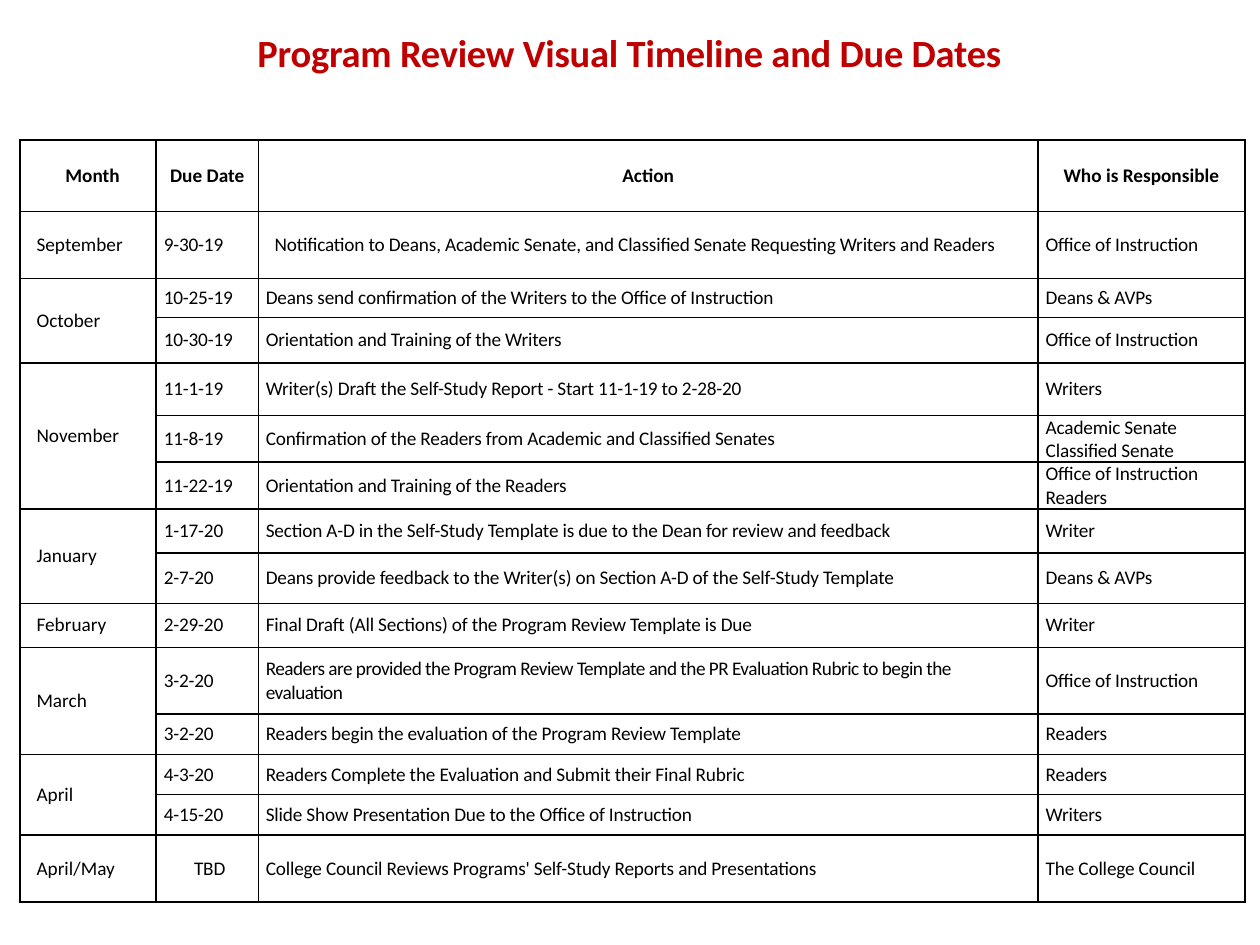
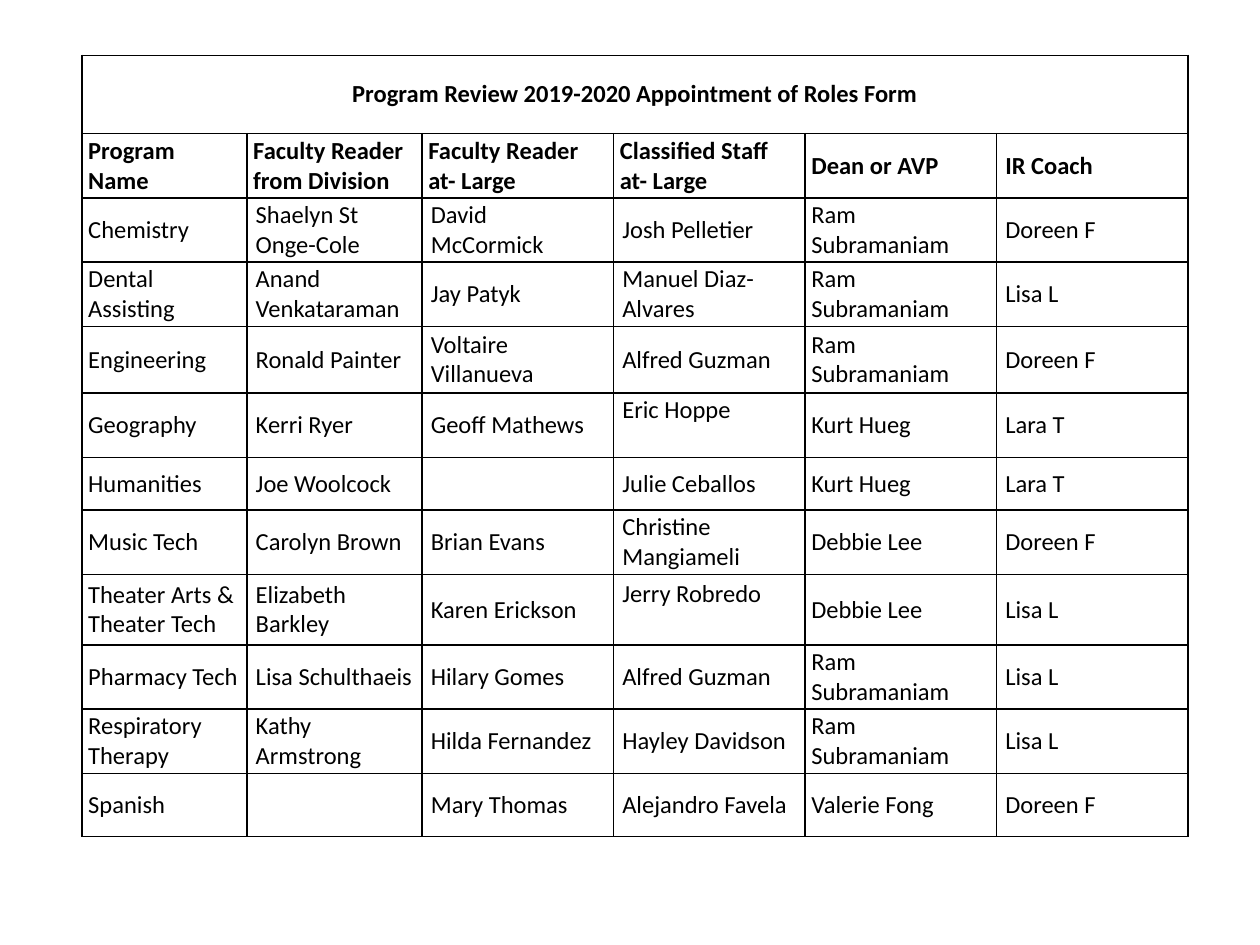
import pptx
import pptx.dml.color
import pptx.enum.text
import pptx.oxml
import pptx.oxml.ns
import pptx.util

PX = 9144  # EMU per px, 100 px to the inch
RED = pptx.dml.color.RGBColor(0xC0, 0x00, 0x00)
BLACK = pptx.dml.color.RGBColor(0x00, 0x00, 0x00)
WHITE = pptx.dml.color.RGBColor(0xFF, 0xFF, 0xFF)
CENTER = pptx.enum.text.PP_ALIGN.CENTER
MIDDLE = pptx.enum.text.MSO_ANCHOR.MIDDLE


class Deck:
    """Holds the shared style and the current slide."""
    font = "Calibri"
    line = pptx.util.Pt(1)

    def __init__(self):
        self.prs = pptx.Presentation()
        self.prs.slide_width, self.prs.slide_height = 1000 * PX, 750 * PX
        self.s = None

    def slide(self):
        self.s = self.prs.slides.add_slide(self.prs.slide_layouts[6])

    def format(self, tf, size, color=BLACK, bold=False, align=None, indent=0, spacing=0):
        for p in tf.paragraphs:
            p.alignment = align
            if indent:
                p._p.get_or_add_pPr().set("marL", str(indent * PX))
            for r in p.runs:
                r.font.name, r.font.size = self.font, pptx.util.Pt(size)
                r.font.bold, r.font.color.rgb = bold, color
                if spacing:  # hundredths of a point
                    r._r.get_or_add_rPr().set("spc", str(spacing))

    def title(self, text, x, y, w, h):
        tf = self.s.shapes.add_textbox(x * PX, y * PX, w * PX, h * PX).text_frame
        tf.word_wrap = True
        tf.text = text
        self.format(tf, 22, RED, True, CENTER, indent=7, spacing=-10)

    def border(self, cell):
        tcPr = cell._tc.get_or_add_tcPr()
        for i, side in enumerate(("lnL", "lnR", "lnT", "lnB")):
            tcPr.insert(i, pptx.oxml.parse_xml(
                f'<a:{side} {pptx.oxml.ns.nsdecls("a")} w="{self.line}">'
                f'<a:solidFill><a:srgbClr val="{BLACK}"/></a:solidFill></a:{side}>'))

    def table(self, x, y, cols, heights, rows, size, style):
        """None in rows continues the cell above or to the left.

        style(row, column) gives the side inset and the text format of a cell.
        """
        t = self.s.shapes.add_table(len(rows), len(cols), x * PX, y * PX,
                                    sum(cols) * PX, sum(heights) * PX).table
        t.first_row = t.horz_banding = False
        for col, w in zip(t.columns, cols):
            col.width = w * PX
        for row, h in zip(t.rows, heights):
            row.height = h * PX
        for i, row in enumerate(rows):
            for j, text in enumerate(row):
                cell = t.cell(i, j)
                cell.fill.solid()
                cell.fill.fore_color.rgb = WHITE
                self.border(cell)
                if text is None:
                    continue
                inset, look = style(i, j)
                cell.margin_left = cell.margin_right = inset * PX
                cell.margin_top = cell.margin_bottom = 0
                cell.vertical_anchor = MIDDLE
                cell.text_frame.text = text
                self.format(cell.text_frame, size, **look)
                # Merge over the continued cells
                down, right = i, j
                while right + 1 < len(row) and row[right + 1] is None:
                    right += 1
                while down + 1 < len(rows) and rows[down + 1][j] is None:
                    down += 1
                if (down, right) != (i, j):
                    cell.merge(t.cell(down, right))
        return t


# Timeline: month, due date, action, who is responsible
TIMELINE = [
    ("Month", "Due Date", "Action", "Who is Responsible"),
    ("September", "9-30-19", "Notification to Deans, Academic Senate, and Classified Senate "
     "Requesting Writers and Readers", "Office of Instruction"),
    ("October", "10-25-19", "Deans send confirmation of the Writers to the Office of Instruction",
     "Deans & AVPs"),
    (None, "10-30-19", "Orientation and Training of the Writers", "Office of Instruction"),
    ("November", "11-1-19", "Writer(s) Draft the Self-Study Report - Start 11-1-19 to 2-28-20",
     "Writers"),
    (None, "11-8-19", "Confirmation of the Readers from Academic and Classified Senates",
     "Academic Senate\nClassified Senate"),
    (None, "11-22-19", "Orientation and Training of the Readers",
     "Office of Instruction\nReaders"),
    ("January", "1-17-20", "Section A-D in the Self-Study Template is due to the Dean for "
     "review and feedback", "Writer"),
    (None, "2-7-20", "Deans provide feedback to the Writer(s) on Section A-D of the "
     "Self-Study Template", "Deans & AVPs"),
    ("February", "2-29-20", "Final Draft (All Sections) of the Program Review Template is Due",
     "Writer"),
    ("March", "3-2-20", "Readers are provided the Program Review Template and the PR "
     "Evaluation Rubric to begin the evaluation", "Office of Instruction"),
    (None, "3-2-20", "Readers begin the evaluation of the Program Review Template", "Readers"),
    ("April", "4-3-20", "Readers Complete the Evaluation and Submit their Final Rubric",
     "Readers"),
    (None, "4-15-20", "Slide Show Presentation Due to the Office of Instruction", "Writers"),
    ("April/May", "TBD", "College Council Reviews Programs' Self-Study Reports and Presentations",
     "The College Council"),
]
NOTIFICATION, RUBRIC, COUNCIL = 1, 10, 14  # rows with a look of their own

# Roles: program, readers, staff, dean, coach
ROLES = [
    ("Program Review 2019-2020 Appointment of Roles Form",) + (None,) * 5,
    ("Program Name", "Faculty Reader from Division", "Faculty Reader at- Large",
     "Classified Staff at- Large", "Dean or AVP", "IR Coach"),
    ("Chemistry", "Shaelyn St Onge-Cole", "David McCormick", "Josh Pelletier",
     "Ram Subramaniam", "Doreen F"),
    ("Dental Assisting", "Anand Venkataraman", "Jay Patyk", "Manuel Diaz-Alvares",
     "Ram Subramaniam", "Lisa L"),
    ("Engineering", "Ronald Painter", "Voltaire Villanueva", "Alfred Guzman",
     "Ram Subramaniam", "Doreen F"),
    ("Geography", "Kerri Ryer", "Geoff Mathews", "Eric Hoppe", "Kurt Hueg", "Lara T"),
    ("Humanities", "Joe Woolcock", "", "Julie Ceballos", "Kurt Hueg", "Lara T"),
    ("Music Tech", "Carolyn Brown", "Brian Evans", "Christine Mangiameli",
     "Debbie Lee", "Doreen F"),
    ("Theater Arts & Theater Tech", "Elizabeth Barkley", "Karen Erickson", "Jerry Robredo",
     "Debbie Lee", "Lisa L"),
    ("Pharmacy Tech", "Lisa Schulthaeis", "Hilary Gomes", "Alfred Guzman",
     "Ram Subramaniam", "Lisa L"),
    ("Respiratory Therapy", "Kathy Armstrong", "Hilda Fernandez", "Hayley Davidson",
     "Ram Subramaniam", "Lisa L"),
    ("Spanish", "", "Mary Thomas", "Alejandro Favela", "Valerie Fong", "Doreen F"),
]
RAISED = (5, 8)  # rows whose staff name sits one line higher


def timeline_style(i, j):
    if i == 0:
        return 6, dict(bold=True, align=CENTER, indent=0 if j else 7)
    if j == 0:
        return 6, dict(indent=7)
    look = dict(spacing=-30 if (i, j) == (RUBRIC, 2) else -10)
    if (i, j) == (NOTIFICATION, 2):
        look["indent"] = 7
    if (i, j) == (COUNCIL, 1):
        look.update(align=CENTER, indent=4)
    return 6, look


def roles_style(i, j):
    inset = 5 if j in (0, 4) or (i < 2 and j < 5) else 7
    return inset, dict(bold=i < 2, align=None if i else CENTER)


def main():
    deck = Deck()

    # Timeline and due dates
    deck.slide()
    deck.title("Program Review Visual Timeline and Due Dates", 49, 18, 894, 47)
    deck.table(16, 111, [108, 81, 619, 164],
               [57, 53, 31, 36, 42, 37, 37, 35, 40, 35, 53, 32, 32, 32, 53],
               TIMELINE, 11, timeline_style)

    # Appointment of roles
    deck.slide()
    t = deck.table(65, 44, [131, 139] + [152] * 4,
                   [62, 51, 51, 51, 53, 51, 42, 51, 56, 51, 51, 50],
                   ROLES, 14, roles_style)
    for i in RAISED:
        t.cell(i, 3).margin_bottom = 24 * PX

    deck.prs.save("out.pptx")


if __name__ == "__main__":
    main()
